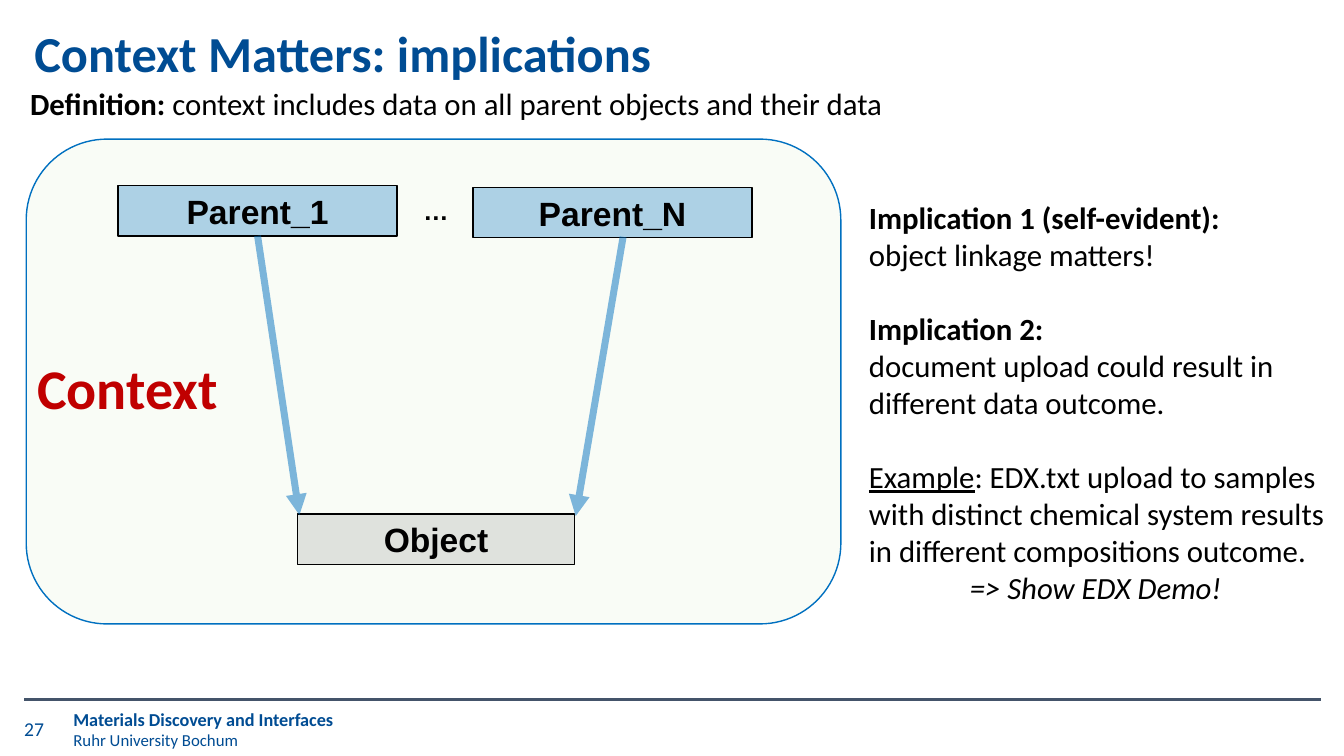
import dataclasses

import lxml.etree
import pptx
import pptx.dml.color
import pptx.enum.shapes
import pptx.enum.text
import pptx.oxml.ns
import pptx.util

PX = 9144


@dataclasses.dataclass(frozen=True)
class Theme:
    """Colours, fonts and type sizes of the slide."""
    navy: str = "004C93"
    blue: str = "0070C0"
    green: str = "92D050"
    grey: str = "A6A6A6"
    slate: str = "44546A"
    red: str = "C00000"
    black: str = "000000"
    sans: str = "Calibri"
    label: str = "Arial"
    title: int = 36
    big: int = 40
    node: int = 24
    body: int = 22
    dots: int = 18
    page: int = 14
    group: int = 13
    school: int = 12


THEME = Theme()
KIND = pptx.enum.shapes.MSO_SHAPE
MIDDLE = pptx.enum.text.MSO_ANCHOR.MIDDLE


def px(*nums):
    """Turn px lengths into EMU."""
    return [num * PX for num in nums]


def rgb(code):
    """Make a colour from its hex code."""
    return pptx.dml.color.RGBColor.from_string(code)


def style(run, size, color, font=THEME.sans, marks=""):
    """Format a run; marks holds b, i or u."""
    run.font.name = font
    run.font.size = pptx.util.Pt(size)
    run.font.color.rgb = rgb(color)
    run.font.bold = "b" in marks
    run.font.italic = "i" in marks
    run.font.underline = "u" in marks


def add_tag(parent, tag, **attrs):
    """Append a drawing element to its parent."""
    lxml.etree.SubElement(parent, pptx.oxml.ns.qn(tag), attrs)


def fade(shape, percent):
    """Give the first colour of a shape an opacity."""
    color = shape.element.spPr.find(".//" + pptx.oxml.ns.qn("a:srgbClr"))
    add_tag(color, "a:alpha", val=str(percent * 1000))


def add_text(slide, at, lines, size, color=THEME.black, font=THEME.sans):
    """Add a text box of lines, each a list of (text, marks) runs."""
    frame = slide.shapes.add_textbox(*px(*at)).text_frame
    frame.word_wrap = True
    for index, line in enumerate(lines):
        para = frame.add_paragraph() if index else frame.paragraphs[0]
        for text, marks in line:
            run = para.add_run()
            run.text = text
            style(run, size, color, font, marks)
    return frame


def add_shape(slide, kind, at, fill, opacity, edge):
    """Add a see-through shape with a thin edge."""
    shape = slide.shapes.add_shape(kind, *px(*at))
    shape.shadow.inherit = False
    shape.fill.solid()
    shape.fill.fore_color.rgb = rgb(fill)
    shape.line.color.rgb = rgb(edge)
    shape.line.width = pptx.util.Pt(1)
    fade(shape, opacity)
    return shape


def add_node(slide, name, at, fill):
    """Add a labelled box of the object graph."""
    node = add_shape(slide, KIND.RECTANGLE, at, fill, 30, THEME.black)
    node.text_frame.text = name
    para = node.text_frame.paragraphs[0]
    para.alignment = pptx.enum.text.PP_ALIGN.CENTER
    style(para.runs[0], THEME.node, THEME.black, THEME.label, "b")
    return node


def add_line(slide, ends, color, width):
    """Add a straight line without a shadow."""
    line = slide.shapes.add_connector(
        pptx.enum.shapes.MSO_CONNECTOR.STRAIGHT, *px(*ends))
    line.line.color.rgb = rgb(color)
    line.line.width = pptx.util.Pt(width)
    add_tag(line.element.spPr, "a:effectLst")
    return line


def add_arrow(slide, ends):
    """Add a pale arrow from a parent to the object."""
    arrow = add_line(slide, ends, THEME.blue, 5)
    fade(arrow, 50)
    edge = arrow.element.spPr.find(pptx.oxml.ns.qn("a:ln"))
    add_tag(edge, "a:tailEnd", type="triangle")
    return arrow


def set_title(slide, text):
    """Place and format the title."""
    title = slide.shapes.title
    title.left, title.top, title.width, title.height = px(24, 12, 1287, 87)
    frame = title.text_frame
    frame.text = text
    frame.vertical_anchor = MIDDLE
    frame.margin_top = frame.margin_bottom = 4 * PX
    para = frame.paragraphs[0]
    para.alignment = pptx.enum.text.PP_ALIGN.LEFT
    para.line_spacing = 0.9
    style(para.runs[0], THEME.title, THEME.navy, marks="b")


def add_footer(slide):
    """Add the page number, rule and sender."""
    page = add_text(slide, (24, 699, 53, 47), [[("27", "")]],
                    THEME.page, THEME.navy)
    page.margin_left = 0
    add_line(slide, (24, 694, 1310, 694), THEME.slate, 1.5)
    sender = add_text(slide, (63, 697, 546, 53), [
        [("Materials Discovery and Interfaces", "b")],
        [("Ruhr University Bochum", "")],
    ], THEME.group, THEME.navy)
    sender.paragraphs[1].runs[0].font.size = pptx.util.Pt(THEME.school)
    page.vertical_anchor = sender.vertical_anchor = MIDDLE


def add_graph(slide):
    """Draw the context with parents and object."""
    add_shape(slide, KIND.ROUNDED_RECTANGLE, (26, 138, 808, 481),
              THEME.green, 5, THEME.blue)
    add_node(slide, "Object", (295, 510, 275, 50), THEME.grey)
    first = add_node(slide, "Parent_1", (117, 184, 277, 50), THEME.blue)
    add_node(slide, "Parent_N", (469, 186, 277, 50), THEME.blue)
    add_arrow(slide, (618, 235, 571, 512))
    add_arrow(slide, (256, 234, 297, 511)).begin_connect(first, 2)
    add_text(slide, (27, 346, 214, 77), [[("Context", "b")]],
             THEME.big, THEME.red)
    add_text(slide, (410, 189, 61, 40), [[("…", "b")]],
             THEME.dots, font=THEME.label)


def add_notes(slide):
    """Add the definition and its implications."""
    add_text(slide, (20, 79, 942, 84), [[
        ("Definition: ", "b"),
        ("context includes data on all parent objects and their data", ""),
    ]], THEME.body)
    frame = add_text(slide, (852, 192, 481, 417), [
        [("Implication 1 (self-evident):", "b")],
        [("object linkage matters!", "")],
        [("Implication 2:", "b")],
        [("document upload could result in different data outcome.", "")],
        [("Example", "u"),
         (": EDX.txt upload to samples with distinct chemical system "
          "results in different compositions outcome.", "")],
        [("=> Show EDX Demo!", "i")],
    ], THEME.body)
    for index in (2, 4):
        frame.paragraphs[index].space_before = pptx.util.Pt(26.5)
    frame.paragraphs[5]._p.get_or_add_pPr().set("marL", str(100 * PX))


def main():
    """Build and save the slide."""
    deck = pptx.Presentation()
    deck.slide_width, deck.slide_height = px(1333, 750)
    slide = deck.slides.add_slide(deck.slide_layouts[5])
    add_footer(slide)
    set_title(slide, "Context Matters: implications")
    add_graph(slide)
    add_notes(slide)
    deck.save("out.pptx")


if __name__ == "__main__":
    main()
